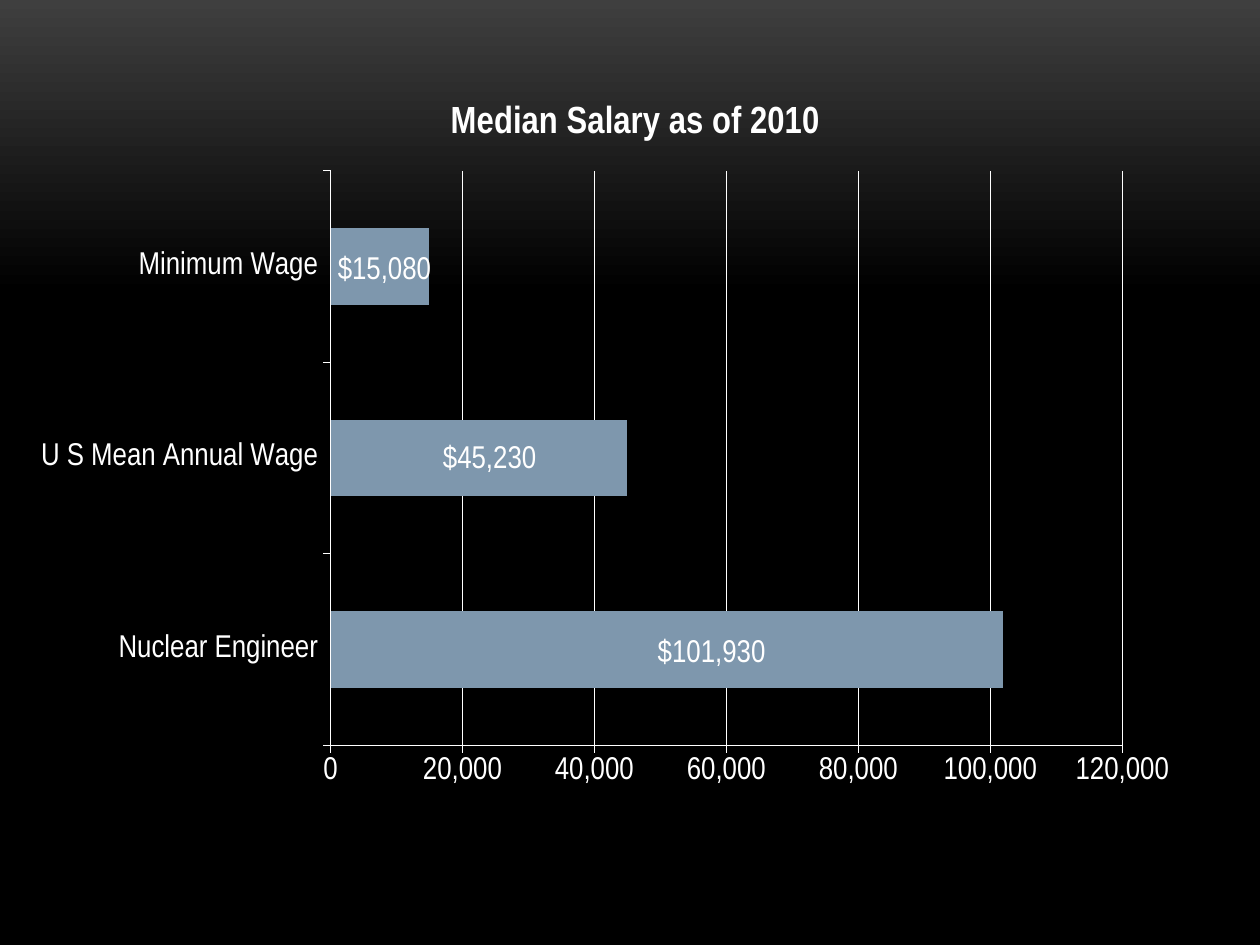
from lxml import etree
from pptx import Presentation
from pptx.chart.data import CategoryChartData
from pptx.dml.color import RGBColor
from pptx.enum.chart import XL_CHART_TYPE, XL_TICK_MARK
from pptx.enum.text import MSO_AUTO_SIZE
from pptx.oxml import parse_xml
from pptx.oxml.ns import nsdecls, qn
from pptx.util import Cm, Pt

BAR_CLUSTERED = XL_CHART_TYPE.BAR_CLUSTERED
TICK_OUTSIDE = XL_TICK_MARK.OUTSIDE
TICK_NONE = XL_TICK_MARK.NONE
GROW = MSO_AUTO_SIZE.SHAPE_TO_FIT_TEXT

SALARIES = {
    "Nuclear Engineer": 102000,
    "U S Mean Annual Wage": 45000,
    "Minimum Wage": 15000,
}
SALARY_LABELS = [
    ("$15,080", 6.56, 4.88, 4.45),
    ("$45,230", 8.68, 8.69, 4.88),
    ("$101,930", 13.01, 12.6, 4.01),
]


def color(value):
    return RGBColor.from_string(value)


class SalarySlide:
    font_name = "Arial Narrow"
    text_color = "FFFFFF"
    bar_color = "7E97AD"
    text_size = 18
    title_size = 21.6

    def __init__(self, deck):
        self.slide = deck.slides.add_slide(deck.slide_layouts[6])

    def style_font(self, font, size, bold=False):
        font.name = self.font_name
        font.size = Pt(size)
        font.bold = bold
        font.color.rgb = color(self.text_color)

    def style_line(self, line):
        line.color.rgb = color(self.text_color)
        line.width = Pt(0.5)

    def background(self, top, bottom, fade_end):
        fill = self.slide.background.fill
        fill.gradient()
        fill.gradient_angle = 270
        for stop, shade, position in zip(fill.gradient_stops, (top, bottom), (0, fade_end)):
            stop.color.rgb = color(shade)
            stop.position = position

    def place(self, parent, **settings):
        layout = parent.find(qn("c:layout"))
        if layout is None:
            layout = parse_xml(f"<c:layout {nsdecls('c')}/>")
            before = parent.find(qn("c:tx"))
            if before is None:
                parent.insert(0, layout)
            else:
                before.addnext(layout)
        manual = etree.SubElement(layout, qn("c:manualLayout"))
        for name, value in settings.items():
            etree.SubElement(manual, qn(f"c:{name}")).set("val", str(value))

    def chart(self, title, salaries, left, top, width, height):
        data = CategoryChartData(number_format="General")
        data.categories = list(salaries)
        data.add_series("Series 1", list(salaries.values()))
        frame = self.slide.shapes.add_chart(
            BAR_CLUSTERED, Cm(left), Cm(top), Cm(width), Cm(height), data)
        chart = frame.chart
        self.style_font(chart.font, self.text_size)
        chart.has_legend = False
        self.chart_title(chart, title)

        plot = chart.plots[0]
        plot.gap_width = 150
        plot.vary_by_categories = False
        bars = plot.series[0].format.fill
        bars.solid()
        bars.fore_color.rgb = color(self.bar_color)

        for axis in (chart.category_axis, chart.value_axis):
            axis.major_tick_mark = TICK_OUTSIDE
            axis.minor_tick_mark = TICK_NONE
            self.style_line(axis.format.line)
            self.style_font(axis.tick_labels.font, self.text_size)
        self.value_scale(chart.value_axis)
        self.place(plot._element.getparent(), layoutTarget="inner",
                   xMode="edge", yMode="edge", x=0.297, y=0.102, w=0.65, h=0.77)

    def chart_title(self, chart, title):
        chart.has_title = True
        run = chart.chart_title.text_frame.paragraphs[0].add_run()
        run.text = title
        self.style_font(run.font, self.title_size, bold=True)
        self.place(chart.chart_title._element, xMode="edge", yMode="edge", x=0.39, y=-0.01)

    def value_scale(self, axis):
        axis.minimum_scale = 0
        axis.maximum_scale = 120000
        axis.major_unit = 20000
        axis.has_major_gridlines = True
        self.style_line(axis.major_gridlines.format.line)
        axis.tick_labels.number_format = "#,##0"
        axis.tick_labels.number_format_is_linked = False

    def label(self, text, left, top, width):
        box = self.slide.shapes.add_textbox(Cm(left), Cm(top), Cm(width), Cm(1.02))
        frame = box.text_frame
        frame.word_wrap = True
        frame.auto_size = GROW
        run = frame.paragraphs[0].add_run()
        run.text = text
        self.style_font(run.font, self.text_size)


def main():
    deck = Presentation()
    deck.slide_width = Cm(25.4)
    deck.slide_height = Cm(19.05)
    salary_slide = SalarySlide(deck)
    salary_slide.background("3F3F3F", "000000", 0.31)
    salary_slide.chart("Median Salary as of 2010", SALARIES, -0.63, 1.91, 24.56, 15.04)
    for salary_label in SALARY_LABELS:
        salary_slide.label(*salary_label)
    deck.save("out.pptx")


if __name__ == "__main__":
    main()
